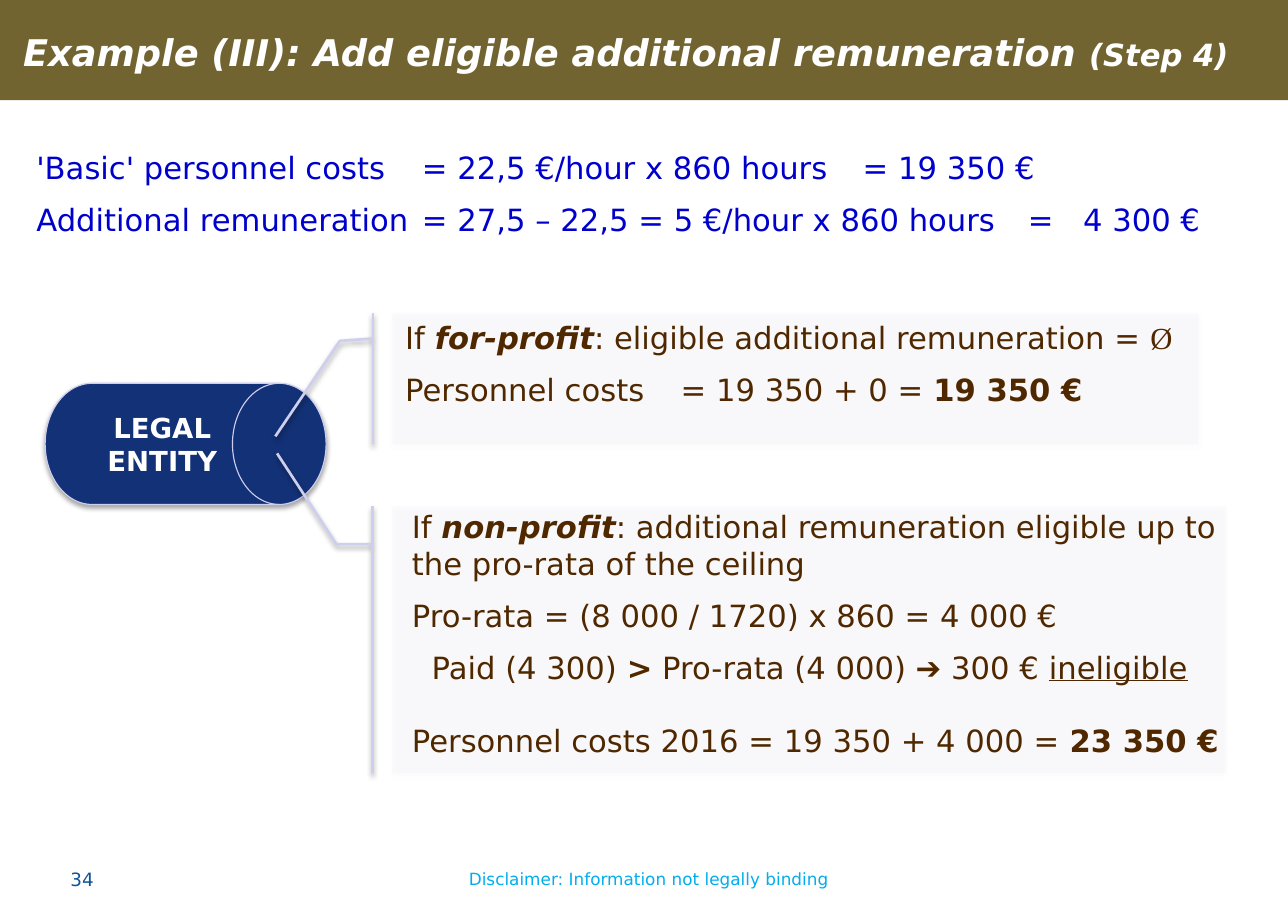
from lxml.etree import SubElement
from pptx import Presentation
from pptx.dml.color import RGBColor
from pptx.enum.shapes import MSO_SHAPE
from pptx.enum.text import MSO_ANCHOR, MSO_AUTO_SIZE, PP_ALIGN
from pptx.oxml import parse_xml
from pptx.oxml.ns import nsdecls, qn
from pptx.util import Inches, Pt

COLORS = {
    "olive": "726430", "white": "FFFFFF", "blue": "0000CC", "navy": "133176",
    "lavender": "CECEEF", "brown": "502800", "number": "0F5494", "cyan": "00AEEF",
}
BOLD = {"bold": True}
BOLD_ITALIC = {"bold": True, "italic": True}


def write(box, paras, size, color, align=PP_ALIGN.LEFT):
    """Each paragraph: (spans, space before, left margin, tab stops)."""
    frame = box.text_frame
    frame.word_wrap = True
    frame.auto_size = MSO_AUTO_SIZE.NONE
    for index, (spans, before, margin, stops) in enumerate(paras):
        para = frame.paragraphs[0] if index == 0 else frame.add_paragraph()
        props = para._p.get_or_add_pPr()
        props.set("marL", str(Inches(margin)))
        props.set("indent", "0")
        SubElement(props, qn("a:buNone"))
        if stops:
            tabs = SubElement(props, qn("a:tabLst"))
            for stop in stops:
                SubElement(tabs, qn("a:tab"), pos=str(Inches(stop)), algn="l")
        para.alignment = align
        para.space_before = Pt(before)
        for text, changes in spans:
            span = para.add_run()
            span.text = text
            formats = {"name": "DejaVu Sans", "size": Pt(size), "bold": False, **changes}
            for name, value in formats.items():
                setattr(span.font, name, value)
            span.font.color.rgb = RGBColor.from_string(COLORS[color])


def style(shape, fill, line_width, alpha=100):
    """Solid fill, lavender line and a soft shadow below."""
    shape.fill.solid()
    shape.fill.fore_color.rgb = RGBColor.from_string(COLORS[fill])
    if alpha < 100:
        tint = shape.fill._xPr.find(qn("a:solidFill"))[0]
        SubElement(tint, qn("a:alpha"), val=str(alpha * 1000))
    shape.line.color.rgb = RGBColor.from_string(COLORS["lavender"])
    shape.line.width = Pt(line_width)
    shape._element.spPr.append(parse_xml(
        f'<a:effectLst {nsdecls("a")}><a:outerShdw blurRad="{Pt(3.1)}" dist="{Pt(1.8)}" '
        'dir="5400000" rotWithShape="0"><a:srgbClr val="000000"><a:alpha val="35000"/>'
        '</a:srgbClr></a:outerShdw></a:effectLst>'))


deck = Presentation()
deck.slide_width, deck.slide_height = Inches(11.69), Inches(8.27)
page = deck.slides.add_slide(deck.slide_layouts[1])
title, costs = page.placeholders

# Title on its bar
bar = page.shapes.add_shape(MSO_SHAPE.RECTANGLE, Inches(-0.01), 0, Inches(11.72), Inches(0.91))
bar.shadow.inherit = False
bar.fill.solid()
bar.fill.fore_color.rgb = RGBColor.from_string(COLORS["olive"])
bar.line.fill.background()
page.shapes._spTree.insert(2, bar._element)

title.left, title.top, title.width, title.height = map(Inches, (0.1, 0.03, 11.5, 0.88))
title.text_frame.margin_left = title.text_frame.margin_right = Inches(0.11)
title.text_frame.vertical_anchor = MSO_ANCHOR.MIDDLE
write(title, [([
    ("Example (III): Add eligible additional remuneration ", BOLD_ITALIC),
    ("(Step 4)", {**BOLD_ITALIC, "size": Pt(20)}),
], 0, 0, ())], 24, "white")

# Cost lines
costs.left, costs.top, costs.width, costs.height = map(Inches, (0.23, 1.3, 11.34, 0.94))
write(costs, [
    ([("'Basic' personnel costs\t= 22,5 €/hour x 860 hours\t= 19 350 €", {})],
     0, 0, (3.36, 8.96)),
    ([("Additional remuneration\t= 27,5 – 22,5 = 5 €/hour x 860 hours\t=\t4 300 €", {})],
     10, 0, (3.92, 9.53, 10.02)),
], 20, "blue")

# Legal entity drum
drum = page.shapes.add_shape(MSO_SHAPE.FLOWCHART_DIRECT_ACCESS_STORAGE,
                             Inches(0.41), Inches(3.48), Inches(2.55), Inches(1.1))
style(drum, "navy", 0.75)
drum.text_frame.vertical_anchor = MSO_ANCHOR.MIDDLE
write(drum, [([("LEGAL ENTITY", BOLD)], 0, 0, ())], 18, "white", PP_ALIGN.CENTER)

# Callouts for the two cases
callouts = [
    ((3.56, 2.84, 7.32, 1.19), (0.196, -0.024, 0.214, -0.065, 0.942, -0.145)),
    ((3.56, 4.59, 7.57, 2.43), (0.144, -0.024, 0.144, -0.067, -0.195, -0.138)),
]
for place, bends in callouts:
    callout = page.shapes.add_shape(MSO_SHAPE.LINE_CALLOUT_2_ACCENT_BAR, *map(Inches, place))
    for index, bend in enumerate(bends):
        callout.adjustments[index] = bend
    style(callout, "lavender", 1.75, alpha=5)

# Text of the cases, page number and disclaimer
for_profit = [
    ([("If ", {}), ("for-profit", BOLD_ITALIC),
      (": eligible additional remuneration = ", {}), ("Ø", {"name": "Times New Roman"})],
     0, 0, ()),
    ([("Personnel costs\t= 19 350 + 0 = ", {}), ("19 350 €", BOLD)], 10, 0, (2.35,)),
]
non_profit = [
    ([("If ", {}), ("non-profit", BOLD_ITALIC),
      (": additional remuneration eligible up to the pro-rata of the ceiling", {})], 0, 0, ()),
    ([("Pro-rata = (8 000 / 1720) x 860 = 4 000 €", {})], 10, 0, ()),
    ([("Paid (4 300) ", {}), (">", BOLD), (" Pro-rata (4 000) ➔ 300 € ", {}),
      ("ineligible", {"underline": True})], 10, 0.18, ()),
    ([("Personnel costs 2016 = 19 350 + 4 000 = ", {}), ("23 350 €", BOLD)], 24, 0, ()),
]
texts = [
    ((3.58, 2.85, 7.33, 0.94), for_profit, 20, "brown", PP_ALIGN.LEFT),
    ((3.64, 4.56, 7.72, 2.96), non_profit, 20, "brown", PP_ALIGN.LEFT),
    ((0.54, 7.83, 0.82, 0.3), [([("34", {})], 0, 0, ())], 12, "number", PP_ALIGN.LEFT),
    ((4.04, 7.84, 3.7, 0.29), [([("Disclaimer: Information not legally binding", {})], 0, 0, ())],
     11, "cyan", PP_ALIGN.CENTER),
]
for place, paras, size, color, align in texts:
    box = page.shapes.add_textbox(*map(Inches, place))
    write(box, paras, size, color, align)

deck.save("out.pptx")
